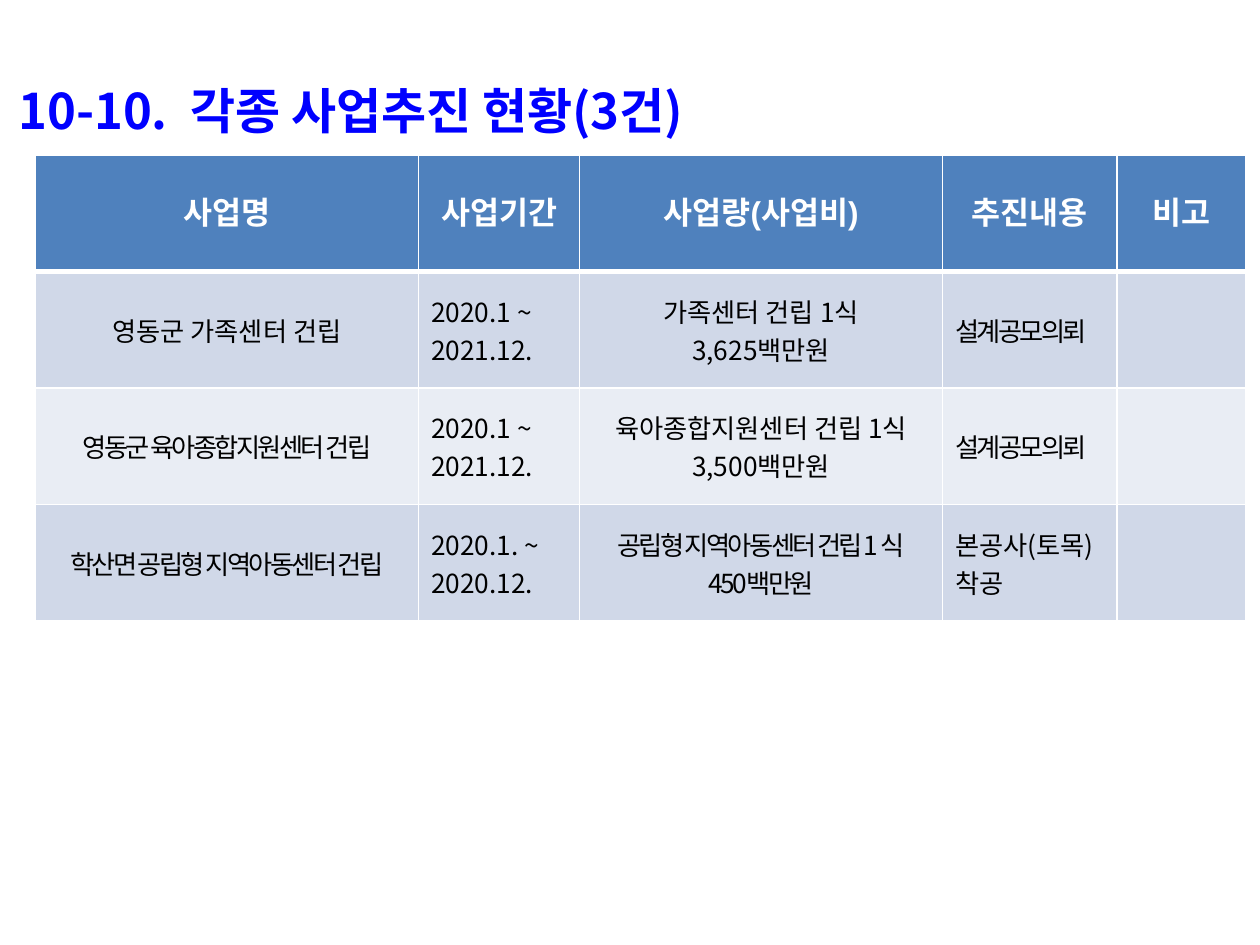
from lxml.etree import SubElement
from pptx import Presentation
from pptx.dml.color import RGBColor
from pptx.enum.text import MSO_ANCHOR as Anchor, PP_ALIGN as Align
from pptx.oxml import parse_xml
from pptx.oxml.ns import nsdecls, qn
from pptx.util import Pt

COLORS = {
    "title": "0000FF",
    "header": "4F81BD",
    "odd": "D0D8E8",
    "even": "E9EDF4",
    "text": "000000",
    "white": "FFFFFF",
}
BODY_FONT = "Noto Sans CJK KR"
HEADER_FONT = "Arial"
COLUMN_WIDTHS = [219, 92, 207.5, 99.5, 73.5]
COLUMN_ALIGNS = [Align.CENTER, Align.LEFT, Align.CENTER, Align.LEFT, Align.CENTER]
ROW_HEIGHT = 66.6
TIGHT = -1.5

HEADERS = ["사업명", "사업기간", "사업량(사업비)", "추진내용", "비고"]
PROJECTS = [
    ["영동군 가족센터 건립", "2020.1 ~\n2021.12.",
     "가족센터 건립 1식\n3,625백만원", "설계공모의뢰", ""],
    ["영동군 육아종합지원센터 건립", "2020.1 ~\n2021.12.",
     "육아종합지원센터 건립 1식\n3,500백만원", "설계공모의뢰", ""],
    ["학산면 공립형 지역아동센터 건립", "2020.1. ~\n2020.12.",
     "공립형 지역아동센터 건립1 식\n450백만원", "본공사(토목)착공", ""],
]
TIGHT_COLUMNS = [{3}, {0, 3}, {0, 2}]


def write_text(frame, text, size=15, font=BODY_FONT, color="text", bold=False,
               align=Align.LEFT, spacing=0, line_spacing=None):
    for index, line in enumerate(text.split("\n")):
        paragraph = frame.paragraphs[0] if index == 0 else frame.add_paragraph()
        paragraph.alignment = align
        if line_spacing:
            paragraph.line_spacing = line_spacing
        if not line:
            continue
        run = paragraph.add_run()
        run.text = line
        run.font.size = Pt(size)
        run.font.bold = bold
        run.font.color.rgb = RGBColor.from_string(COLORS[color])
        run.font.name = font
        properties = run.font._element
        SubElement(properties, qn("a:ea")).set("typeface", font)
        if spacing:
            properties.set("spc", str(int(spacing * 100)))


def add_title(slide, text):
    title = slide.shapes.add_textbox(Pt(-2.9), Pt(25.9), Pt(720), Pt(289.4))
    title.text_frame.word_wrap = True
    write_text(title.text_frame, text, size=28, color="title", bold=True,
               line_spacing=1.5)
    indent = title.text_frame.paragraphs[0]._p.get_or_add_pPr()
    indent.set("marL", str(Pt(41.8)))
    indent.set("indent", str(Pt(-41.8)))


def set_borders(cell, top, bottom):
    widths = {"lnL": 1, "lnR": 1, "lnT": top, "lnB": bottom}
    properties = cell._tc.get_or_add_tcPr()
    for position, (side, width) in enumerate(widths.items()):
        properties.insert(position, parse_xml(
            f'<a:{side} {nsdecls("a")} w="{Pt(width)}"><a:solidFill>'
            f'<a:srgbClr val="{COLORS["white"]}"/></a:solidFill></a:{side}>'))


def fill_cell(cell, text, fill, top=1, bottom=1, **text_format):
    cell.vertical_anchor = Anchor.MIDDLE
    cell.fill.solid()
    cell.fill.fore_color.rgb = RGBColor.from_string(COLORS[fill])
    set_borders(cell, top, bottom)
    write_text(cell.text_frame, text, **text_format)


def add_project_table(slide):
    row_count = len(PROJECTS) + 1
    table = slide.shapes.add_table(
        row_count, len(HEADERS), Pt(20.2), Pt(88.6),
        Pt(sum(COLUMN_WIDTHS)), Pt(ROW_HEIGHT * row_count)).table
    for column, width in zip(table.columns, COLUMN_WIDTHS):
        column.width = Pt(width)
    for row in table.rows:
        row.height = Pt(ROW_HEIGHT)
    for column, header in enumerate(HEADERS):
        fill_cell(table.cell(0, column), header, "header", bottom=3, size=18,
                  font=HEADER_FONT, color="white", bold=True, align=Align.CENTER)
    for row, (project, tight) in enumerate(zip(PROJECTS, TIGHT_COLUMNS), start=1):
        for column, text in enumerate(project):
            fill_cell(table.cell(row, column), text, "odd" if row % 2 else "even",
                      top=3 if row == 1 else 1, align=COLUMN_ALIGNS[column],
                      spacing=TIGHT if column in tight else 0)


def main():
    deck = Presentation()
    deck.slide_width, deck.slide_height = Pt(720), Pt(540)
    slide = deck.slides.add_slide(deck.slide_layouts[6])
    add_title(slide, " 10-10.  각종 사업추진 현황(3건)")
    add_project_table(slide)
    deck.save("out.pptx")


if __name__ == "__main__":
    main()
